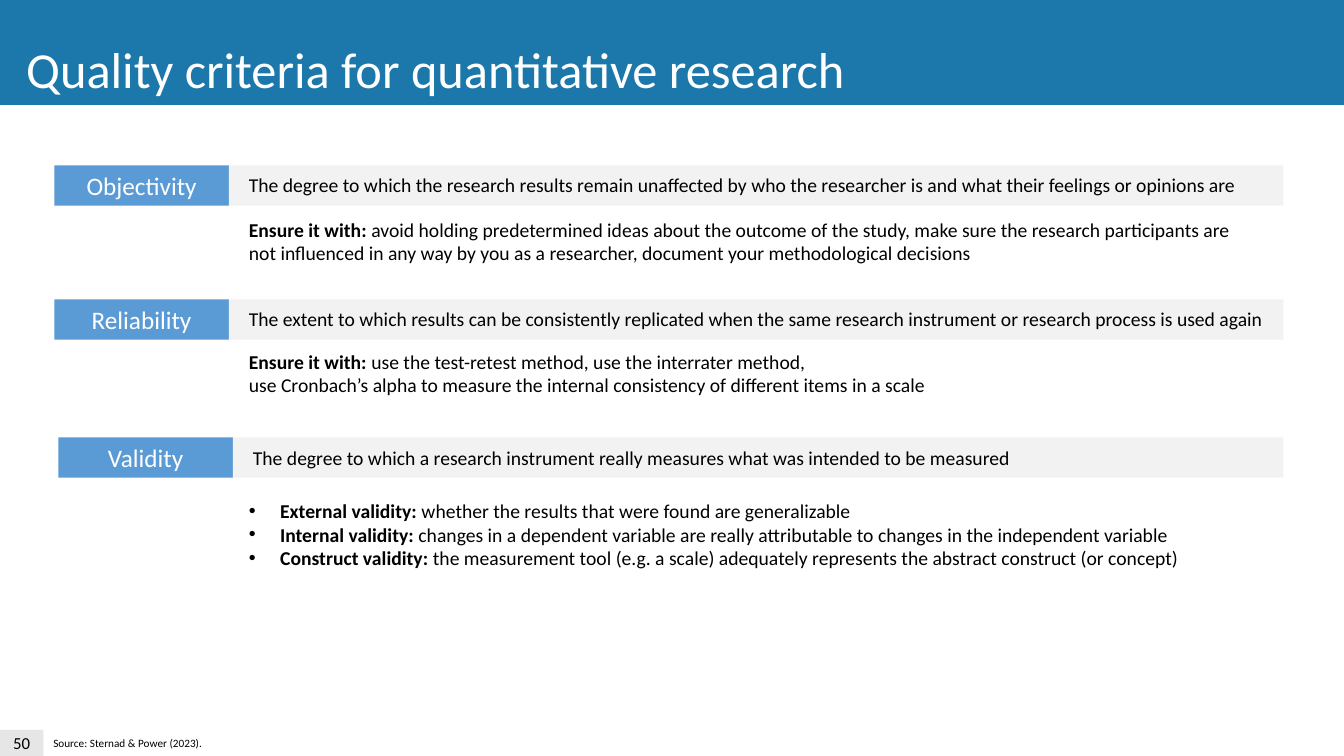
from lxml.etree import SubElement
from pptx import Presentation
from pptx.dml.color import RGBColor
from pptx.enum.shapes import MSO_SHAPE
from pptx.enum.text import MSO_ANCHOR, MSO_AUTO_SIZE, PP_ALIGN
from pptx.oxml.ns import qn
from pptx.util import Inches, Pt

WIDTH, HEIGHT = 13.33, 7.5
FONT = "Calibri"
BAND = RGBColor(0x1C, 0x78, 0xAB)
BLUE = RGBColor(0x5B, 0x9B, 0xD5)
PALE = RGBColor(0xF2, 0xF2, 0xF2)
GREY = RGBColor(0xE7, 0xE6, 0xE6)
WHITE = RGBColor(0xFF, 0xFF, 0xFF)
BLACK = RGBColor(0, 0, 0)

RIGHT = 12.73
LABEL = 1.73
BAR = 0.4
INDENT = 0.31
NOTE_LEFT = 2.37

# Each entry: left, top, gap to the note, note width and height, label, meaning, notes, bullets
CRITERIA = [
    (0.54, 1.64, 0.47, 10.11, 0.57, "Objectivity",
     "The degree to which the research results remain unaffected by who the "
     "researcher is and what their feelings or opinions are",
     [("Ensure it with: ",
       "avoid holding predetermined ideas about the outcome of the study, make "
       "sure the research participants are not influenced in any way by you as "
       "a researcher, document your methodological decisions")], False),
    (0.54, 2.97, 0.45, 9.03, 0.81, "Reliability",
     "The extent to which results can be consistently replicated when the same "
     "research instrument or research process is used again",
     [("Ensure it with: ",
       "use the test-retest method, use the interrater method, \n"
       "use Cronbach’s alpha to measure the internal consistency of different "
       "items in a scale")], False),
    (0.58, 4.34, 0.56, 9.62, 0.81, "Validity",
     "The degree to which a research instrument really measures what was "
     "intended to be measured",
     [("External validity: ",
       "whether the results that were found are generalizable"),
      ("Internal validity: ",
       "changes in a dependent variable are really attributable to changes in "
       "the independent variable"),
      ("Construct validity: ",
       "the measurement tool (e.g. a scale) adequately represents the abstract "
       "construct (or concept)")], True),
]


def style(run, size, color=BLACK, bold=False):
    font = run.font
    font.name, font.size, font.bold = FONT, Pt(size), bold
    font.color.rgb = color


def add_box(slide, box, fill, text="", size=18, color=WHITE):
    shape = slide.shapes.add_shape(MSO_SHAPE.RECTANGLE, *map(Inches, box))
    shape.shadow.inherit = False
    shape.fill.solid()
    shape.fill.fore_color.rgb = fill
    shape.line.fill.background()
    if text:
        frame = shape.text_frame
        frame.text = text
        frame.vertical_anchor = MSO_ANCHOR.MIDDLE
        frame.paragraphs[0].alignment = PP_ALIGN.CENTER
        style(frame.paragraphs[0].runs[0], size, color)


def add_text(slide, box, text="", size=14, wrap=True):
    frame = slide.shapes.add_textbox(*map(Inches, box)).text_frame
    frame.word_wrap = wrap
    if text:
        frame.text = text
        style(frame.paragraphs[0].runs[0], size)
    return frame


def add_bullet(para):
    props = para._p.get_or_add_pPr()
    props.set("marL", str(Inches(INDENT)))
    props.set("indent", str(-Inches(INDENT)))
    SubElement(props, qn("a:buFont")).set("typeface", "Arial")
    SubElement(props, qn("a:buChar")).set("char", "•")


def add_notes(slide, box, notes, bullets):
    """Write one paragraph per note, each with a bold lead."""
    frame = add_text(slide, box)
    for row, (lead, body) in enumerate(notes):
        para = frame.add_paragraph() if row else frame.paragraphs[0]
        para.text = lead
        style(para.runs[0], 14, bold=True)
        for part, line in enumerate(body.split("\n")):
            if part:
                para.add_line_break()
            run = para.add_run()
            run.text = line
            style(run, 14)
        if bullets:
            add_bullet(para)


def add_section(slide, left, top, gap, width, height, label, meaning, notes, bullets):
    split = left + LABEL
    add_box(slide, (left, top, LABEL, BAR), BLUE, label)
    add_box(slide, (split, top, RIGHT - split, BAR), PALE)
    add_text(slide, (split + 0.1, top + 0.03, 10.58, 0.34), meaning)
    add_notes(slide, (NOTE_LEFT, top + gap, width, height), notes, bullets)


def add_header(slide, box, text):
    left, top, width, height = box
    add_box(slide, box, BAND)
    title = slide.shapes.title
    title.left, title.top = Inches(left + 0.16), Inches(top + 0.34)
    title.width, title.height = Inches(8.4), Inches(height - 0.34)
    frame = title.text_frame
    frame.text = text
    frame.word_wrap = False
    frame.auto_size = MSO_AUTO_SIZE.NONE
    frame.vertical_anchor = MSO_ANCHOR.TOP
    frame.paragraphs[0].alignment = PP_ALIGN.LEFT
    style(frame.paragraphs[0].runs[0], 36, WHITE)
    # Bring the title in front of its band
    title.element.getparent().append(title.element)


def add_footer(slide, box, number, source):
    left, top, width, height = box
    add_box(slide, (left, top, 0.43, height), GREY, number, 12, BLACK)
    add_text(slide, (left + 0.43, top + 0.02, 1.69, height - 0.02), source, 8, False)


def main():
    deck = Presentation()
    deck.slide_width, deck.slide_height = Inches(WIDTH), Inches(HEIGHT)
    slide = deck.slides.add_slide(deck.slide_layouts[5])
    add_header(slide, (0, -0.01, WIDTH, 1.05), "Quality criteria for quantitative research")
    add_footer(slide, (0, HEIGHT - 0.26, WIDTH, 0.26), "50", "Source: Sternad & Power (2023).")
    for entry in CRITERIA:
        add_section(slide, *entry)
    deck.save("out.pptx")


if __name__ == "__main__":
    main()
